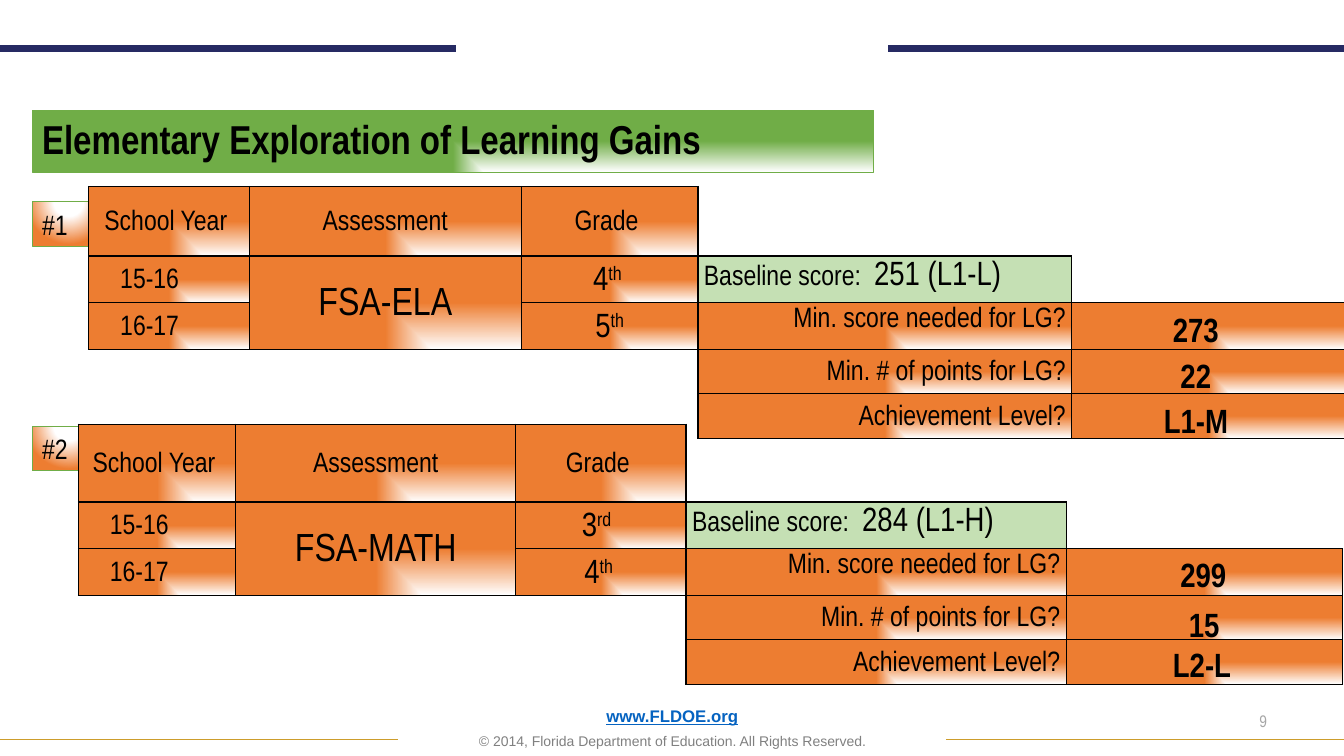
from dataclasses import dataclass

from lxml.etree import SubElement
from pptx import Presentation
from pptx.dml.color import RGBColor
from pptx.enum.shapes import MSO_CONNECTOR, MSO_SHAPE
from pptx.enum.text import MSO_ANCHOR, PP_ALIGN
from pptx.oxml.ns import qn
from pptx.util import Cm, Pt

BLACK = RGBColor(0x00, 0x00, 0x00)
WHITE = RGBColor(0xFF, 0xFF, 0xFF)
ORANGE = RGBColor(0xED, 0x7D, 0x31)
GREEN = RGBColor(0x70, 0xAD, 0x47)
PALE_GREEN = RGBColor(0xC5, 0xE0, 0xB4)
NAVY = RGBColor(0x26, 0x2A, 0x63)
GOLD = RGBColor(0xCD, 0x9D, 0x2C)
LINK_BLUE = RGBColor(0x05, 0x63, 0xC1)
GREY = RGBColor(0x80, 0x80, 0x80)
LIGHT_GREY = RGBColor(0xA6, 0xA6, 0xA6)

NARROW = "Arial Narrow"
PAGE_WIDTH, PAGE_HEIGHT = 33.87, 19.05
MARGIN = 0.81
LEFT, CENTER, RIGHT = PP_ALIGN.LEFT, PP_ALIGN.CENTER, PP_ALIGN.RIGHT
CORNER = ("rect", {"l": 100, "t": 100})
GLOW = ("circle", {"l": 50, "t": -80, "r": 50, "b": 180})


@dataclass
class Example:
    label: str
    label_top: float
    left: float
    top: float
    widths: list
    header_height: float
    assessment: str
    grades: list
    baseline: str
    answers: list  # text, left and top inside the table, width, alignment


EXAMPLES = [
    Example("#1", 5.08, 2.24, 4.7, [4.04, 6.86, 4.45, 9.42, 6.88], 1.75,
            "FSA-ELA", [("4", "th "), ("5", "th")], "251 (L1-L)",
            [("273", 26.46, 2.95, 2.87, CENTER), ("22", 26.46, 4.11, 2.87, CENTER),
             ("L1-M", 26.84, 5.26, 2.49, LEFT)]),
    Example("#2", 10.74, 1.98, 10.69, [3.96, 7.06, 4.29, 9.58, 6.96], 1.96,
            "FSA-MATH", [("3", "rd  "), ("4", "th ")], "284 (L1-H)",
            [("299", 27.1, 3.15, 2.49, CENTER), ("15", 26.93, 4.4, 2.87, CENTER),
             ("L2-L", 27.33, 5.41, 2.31, LEFT)]),
]


def style(para, size, color=BLACK, name=NARROW, bold=False, align=LEFT):
    para.alignment = align
    font = para.font
    font.name, font.size, font.bold = name, Pt(size), bold
    font.color.rgb = color


def add_gradient(parent, color, center, middle_stop):
    """Append a white-to-color path gradient to the XML parent."""
    shade, edges = center
    gradient = SubElement(parent, qn("a:gradFill"), rotWithShape="1")
    stops = SubElement(gradient, qn("a:gsLst"))
    for position, stop_color in ((0, WHITE), (middle_stop, WHITE), (100, color)):
        stop = SubElement(stops, qn("a:gs"), pos=str(position * 1000))
        SubElement(stop, qn("a:srgbClr"), val=str(stop_color))
    shading = SubElement(gradient, qn("a:path"))
    shading.set("path", shade)
    SubElement(shading, qn("a:fillToRect"),
               {edge: str(share * 1000) for edge, share in edges.items()})


def add_text(page, left, top, width, height, text, size, **look):
    box = page.shapes.add_textbox(Cm(left), Cm(top), Cm(width), Cm(height))
    box.text_frame.word_wrap = True
    para = box.text_frame.paragraphs[0]
    para.text = text
    style(para, size, **look)
    return box


def add_banner(page, left, top, width, height, text, size, color, center, middle_stop):
    """Add a rectangle with a gradient fill, a green outline and black text."""
    banner = page.shapes.add_shape(MSO_SHAPE.RECTANGLE, Cm(left), Cm(top), Cm(width), Cm(height))
    banner.shadow.inherit = False
    add_gradient(banner._element.spPr, color, center, middle_stop)
    properties = banner._element.spPr
    properties.insert(2, properties[-1])
    banner.line.color.rgb = GREEN
    banner.line.width = Pt(0.5)
    para = banner.text_frame.paragraphs[0]
    para.text = text
    style(para, size)
    return banner


def add_rule(page, start, end, height, color, width):
    rule = page.shapes.add_connector(MSO_CONNECTOR.STRAIGHT, Cm(start), Cm(height),
                                     Cm(end), Cm(height))
    rule.line.color.rgb = color
    rule.line.width = Pt(width)
    SubElement(rule._element.spPr, qn("a:effectLst"))


def add_borders(cell, edges):
    """Outline the cell, leaving out the edges marked False."""
    for edge, drawn in edges.items():
        line = SubElement(cell._tc.get_or_add_tcPr(), qn(f"a:ln{edge}"), w=str(Pt(1)))
        if drawn:
            fill = SubElement(line, qn("a:solidFill"))
            SubElement(fill, qn("a:srgbClr"), val=str(BLACK))
        else:
            SubElement(line, qn("a:noFill"))


def fill_cell(cell, spans, align, anchor, indent):
    cell.margin_left = cell.margin_right = Cm(0.15)
    cell.margin_top = cell.margin_bottom = 0
    cell.vertical_anchor = anchor
    para = cell.text_frame.paragraphs[0]
    para.line_spacing = 1.15
    if indent:
        para._p.get_or_add_pPr().set("marL", str(Cm(indent)))
    style(para, spans[0][1], align=align)
    for text, size, raised in spans:
        span = para.add_run()
        span.text = text
        span.font.size = Pt(size)
        if raised:
            span.font._element.set("baseline", "30000")


def add_example(page, example):
    add_banner(page, MARGIN, example.label_top, 1.85, 1.12, example.label, 20, ORANGE, GLOW, 35)

    def plain(text, size=20, align=CENTER, anchor=MSO_ANCHOR.MIDDLE, indent=0):
        return [(text, size, False)], align, anchor, indent

    def grade(number, suffix):
        return [(number, 24, False), (suffix, 24, True)], CENTER, MSO_ANCHOR.MIDDLE, 0

    baseline = ([("Baseline score:  ", 20, False), (example.baseline, 24, False)],
                LEFT, MSO_ANCHOR.TOP, 0)
    blank = plain("")
    rows = [
        [plain("School Year "), plain("Assessment"), plain("Grade "), None, None],
        [plain("15-16", align=LEFT, indent=0.64), plain(example.assessment, 28),
         grade(*example.grades[0]), baseline, None],
        [plain("16-17", align=LEFT, indent=0.64), blank, grade(*example.grades[1]),
         plain("Min. score needed for LG?", align=RIGHT, anchor=MSO_ANCHOR.TOP), blank],
        [None, None, None, plain("Min. # of points for LG?", align=RIGHT), blank],
        [None, None, None, plain("Achievement Level?", align=RIGHT), blank],
    ]
    heights = [example.header_height, 1.18, 1.17, 1.12, 1.12]
    table = page.shapes.add_table(5, 5, Cm(example.left), Cm(example.top),
                                  Cm(sum(example.widths)), Cm(sum(heights))).table
    table.first_row = table.horz_banding = False
    for column, width in zip(table.columns, example.widths):
        column.width = Cm(width)
    for row, height in zip(table.rows, heights):
        row.height = Cm(height)

    def filled(row, column):
        return 0 <= row < 5 and 0 <= column < 5 and rows[row][column] is not None

    for r, row in enumerate(rows):
        for c, content in enumerate(row):
            cell = table.cell(r, c)
            neighbours = {"L": (r, c - 1), "R": (r, c + 1), "T": (r - 1, c), "B": (r + 1, c)}
            add_borders(cell, {edge: filled(r, c) or filled(*place)
                               for edge, place in neighbours.items()})
            if content is None:
                cell.fill.background()
                continue
            if content is baseline:
                cell.fill.solid()
                cell.fill.fore_color.rgb = PALE_GREEN
            else:
                add_gradient(cell._tc.tcPr, ORANGE, CORNER, 0)
            if content is not blank:
                fill_cell(cell, *content)
    table.cell(1, 1).merge(table.cell(2, 1))
    for r in (3, 4):
        table.cell(r, 0).merge(table.cell(r, 2))
    for text, left, top, width, align in example.answers:
        add_text(page, example.left + left, example.top + top, width, 1.27,
                 text, 24, bold=True, align=align)


def add_header(page):
    add_rule(page, 0, 11.48, 1.22, NAVY, 5)
    add_rule(page, 22.38, PAGE_WIDTH, 1.22, NAVY, 5)
    title = add_banner(page, MARGIN, 2.77, 21.21, 1.57,
                       "Elementary Exploration of Learning Gains", 28.8, GREEN, CORNER, 0)
    para = title.text_frame.paragraphs[0]
    para.font.bold = True
    para.line_spacing = 0.9


def add_footer(page):
    add_rule(page, 0, 10.03, 18.64, GOLD, 1)
    add_rule(page, 23.85, PAGE_WIDTH, 18.64, GOLD, 1)
    box = add_text(page, 2.34, 17.93, 29.21, 1.09, "www.FLDOE.org", 12,
                   color=LINK_BLUE, name="Arial", bold=True, align=CENTER)
    frame = box.text_frame
    frame.vertical_anchor = MSO_ANCHOR.BOTTOM
    frame.paragraphs[0].font.underline = True
    notice = frame.add_paragraph()
    notice.text = "© 2014, Florida Department of Education. All Rights Reserved."
    style(notice, 10, GREY, "Arial", align=CENTER)
    notice.space_before = Pt(6)
    for para in frame.paragraphs:
        para.line_spacing = 0.9
    number = add_text(page, 24.28, 17.65, 7.9, 1.02, "9", 12, color=LIGHT_GREY, align=RIGHT)
    number.text_frame.vertical_anchor = MSO_ANCHOR.MIDDLE


def main():
    deck = Presentation()
    deck.slide_width, deck.slide_height = Cm(PAGE_WIDTH), Cm(PAGE_HEIGHT)
    page = deck.slides.add_slide(deck.slide_layouts[6])
    add_footer(page)
    add_header(page)
    for example in EXAMPLES:
        add_example(page, example)
    deck.save("out.pptx")


if __name__ == "__main__":
    main()
